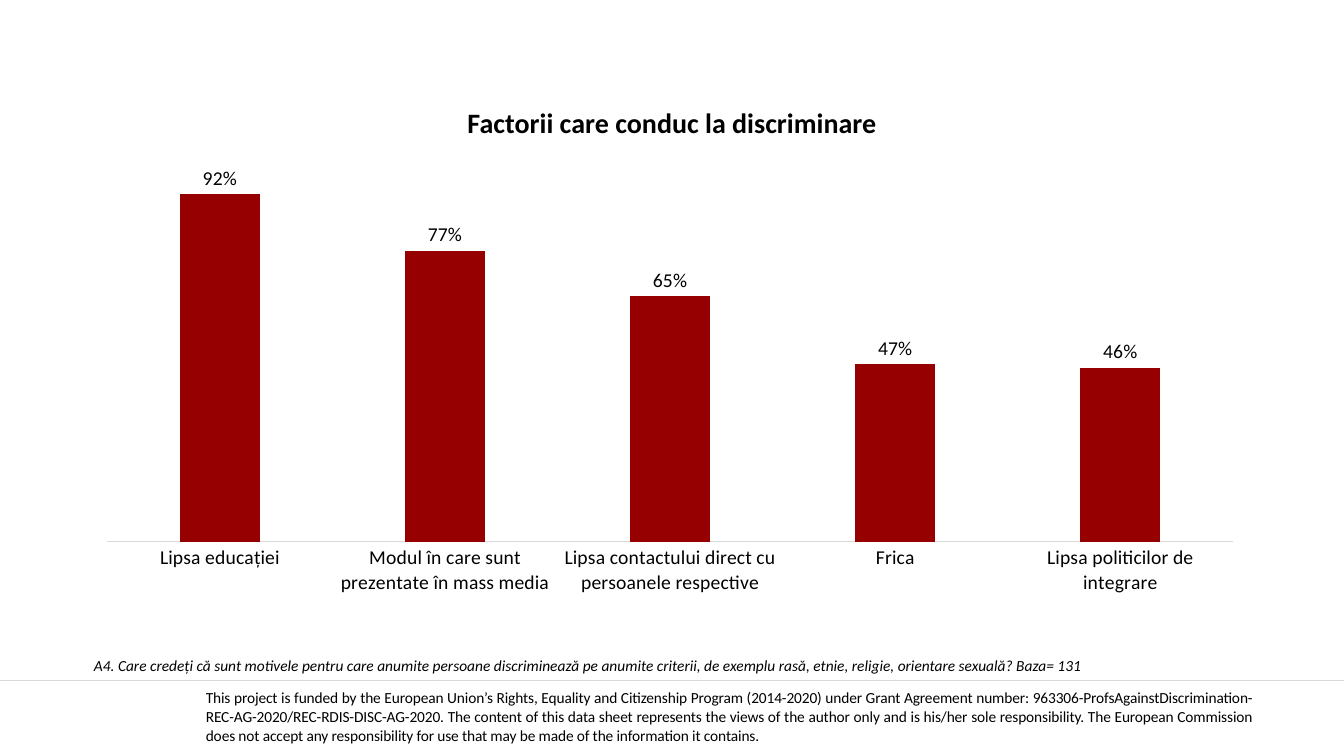
from lxml.etree import SubElement
from pptx import Presentation
from pptx.chart.data import CategoryChartData
from pptx.dml.color import RGBColor
from pptx.enum.chart import XL_CHART_TYPE, XL_LABEL_POSITION, XL_TICK_MARK
from pptx.enum.shapes import MSO_CONNECTOR
from pptx.enum.text import MSO_ANCHOR, MSO_AUTO_SIZE, PP_ALIGN
from pptx.oxml import parse_xml
from pptx.oxml.ns import nsdecls, qn
from pptx.util import Pt

BLACK, GREY, RED = "000000", "D9D9D9", "960000"
WIDE, HIGH = 960, 540
TITLE = "Factorii care conduc la discriminare"
NOTE = (
    "A4. Care credeți că sunt motivele pentru care anumite persoane discriminează pe "
    "anumite criterii, de exemplu rasă, etnie, religie, orientare sexuală? Baza= 131"
)
GRANT = (
    "This project is funded by the European Union’s Rights, Equality and Citizenship "
    "Program (2014-2020) under Grant Agreement number: "
    "963306-ProfsAgainstDiscrimination-REC-AG-2020/REC-RDIS-DISC-AG-2020. "
    "The content of this data sheet represents the views of the author only and is "
    "his/her sole responsibility. The European Commission does not accept any "
    "responsibility for use that may be made of the information it contains."
)
FACTORS = {
    "Lipsa educației": 0.92,
    "Modul în care sunt prezentate în mass media": 0.77,
    "Lipsa contactului direct cu persoanele respective": 0.65,
    "Frica": 0.47,
    "Lipsa politicilor de integrare": 0.46,
}
PLOT = {"x": 0.02, "y": 0.02, "w": 0.96, "h": 0.85}


def paint(color):
    """Turn a hex string into a colour."""
    return RGBColor.from_string(color)


def style(font, size, bold=False, italic=False):
    """Set the face, size and colour of a font."""
    font.name, font.size = "Calibri", Pt(size)
    font.bold, font.italic = bold, italic
    font.color.rgb = paint(BLACK)


def add_text(slide, box, text, size, **look):
    """Add a wrapped text box and return its frame."""
    frame = slide.shapes.add_textbox(*map(Pt, box)).text_frame
    frame.word_wrap = True
    frame.text = text
    style(frame.paragraphs[0].runs[0].font, size, **look)
    return frame


def add_grant(slide, box):
    """Add the funding statement as a table of one cell."""
    table = slide.shapes.add_table(1, 1, *map(Pt, box)).table
    table.first_row = table.horz_banding = False
    cell = table.cell(0, 0)
    cell.fill.background()
    cell.vertical_anchor = MSO_ANCHOR.MIDDLE
    cell.margin_left = cell.margin_right = cell.margin_top = cell.margin_bottom = 0
    cell.text = GRANT
    para = cell.text_frame.paragraphs[0]
    para.alignment = PP_ALIGN.JUSTIFY
    style(para.runs[0].font, 11)
    para.runs[0].font._element.set("spc", "-10")


def place_plot(chart):
    """Fix the inner plot area within the chart."""
    area = chart._chartSpace.find(".//" + qn("c:plotArea"))
    for old in area.findall(qn("c:layout")):
        area.remove(old)
    layout = parse_xml(f"<c:layout {nsdecls('c')}><c:manualLayout/></c:layout>")
    parts = {"layoutTarget": "inner", "xMode": "edge", "yMode": "edge", **PLOT}
    for tag, value in parts.items():
        SubElement(layout[0], qn("c:" + tag)).set("val", str(value))
    area.insert(0, layout)


def add_bars(slide, box):
    """Add the column chart of factors."""
    data = CategoryChartData(number_format="###0%")
    data.categories = list(FACTORS)
    data.add_series("Series 1", list(FACTORS.values()))
    kind = XL_CHART_TYPE.COLUMN_CLUSTERED
    chart = slide.shapes.add_chart(kind, *map(Pt, box), data).chart
    chart.has_legend = chart.has_title = False
    style(chart.font, 14)

    axis = chart.category_axis
    axis.major_tick_mark = axis.minor_tick_mark = XL_TICK_MARK.NONE
    axis.format.line.color.rgb = paint(GREY)
    axis.format.line.width = Pt(0.75)
    style(axis.tick_labels.font, 14)

    scale = chart.value_axis
    scale.visible = scale.has_major_gridlines = False
    scale.minimum_scale, scale.maximum_scale = 0, 1

    plot = chart.plots[0]
    plot.gap_width = 182
    plot.vary_by_categories = False
    bars = plot.series[0]
    bars.format.fill.solid()
    bars.format.fill.fore_color.rgb = paint(RED)
    labels = bars.data_labels
    labels.show_value = True
    labels.position = XL_LABEL_POSITION.OUTSIDE_END
    labels.number_format = "###0%"
    labels.number_format_is_linked = False
    style(labels.font, 14)
    place_plot(chart)


def add_rule(slide, top):
    """Add a thin line across the slide."""
    ends = map(Pt, (0, top, WIDE, top))
    rule = slide.shapes.add_connector(MSO_CONNECTOR.STRAIGHT, *ends)
    rule.line.color.rgb = paint(GREY)
    rule.line.width = Pt(0.5)
    SubElement(rule._element.spPr, qn("a:effectLst"))


def main():
    """Build and save the slide."""
    deck = Presentation()
    deck.slide_width, deck.slide_height = Pt(WIDE), Pt(HIGH)
    slide = deck.slides.add_slide(deck.slide_layouts[6])
    add_grant(slide, (147, 474.5, 748, 75))
    add_bars(slide, (60, 111, 837.5, 317.5))
    add_rule(slide, 486)
    note = add_text(slide, (60, 465, 757.5, 21), NOTE, 11, italic=True)
    note.auto_size = MSO_AUTO_SIZE.SHAPE_TO_FIT_TEXT
    title = add_text(slide, (220.5, 65.5, 519, 46), TITLE, 20, bold=True)
    title.vertical_anchor = MSO_ANCHOR.MIDDLE
    title.paragraphs[0].alignment = PP_ALIGN.CENTER
    title.paragraphs[0].line_spacing = 0.9
    deck.save("out.pptx")


if __name__ == "__main__":
    main()
